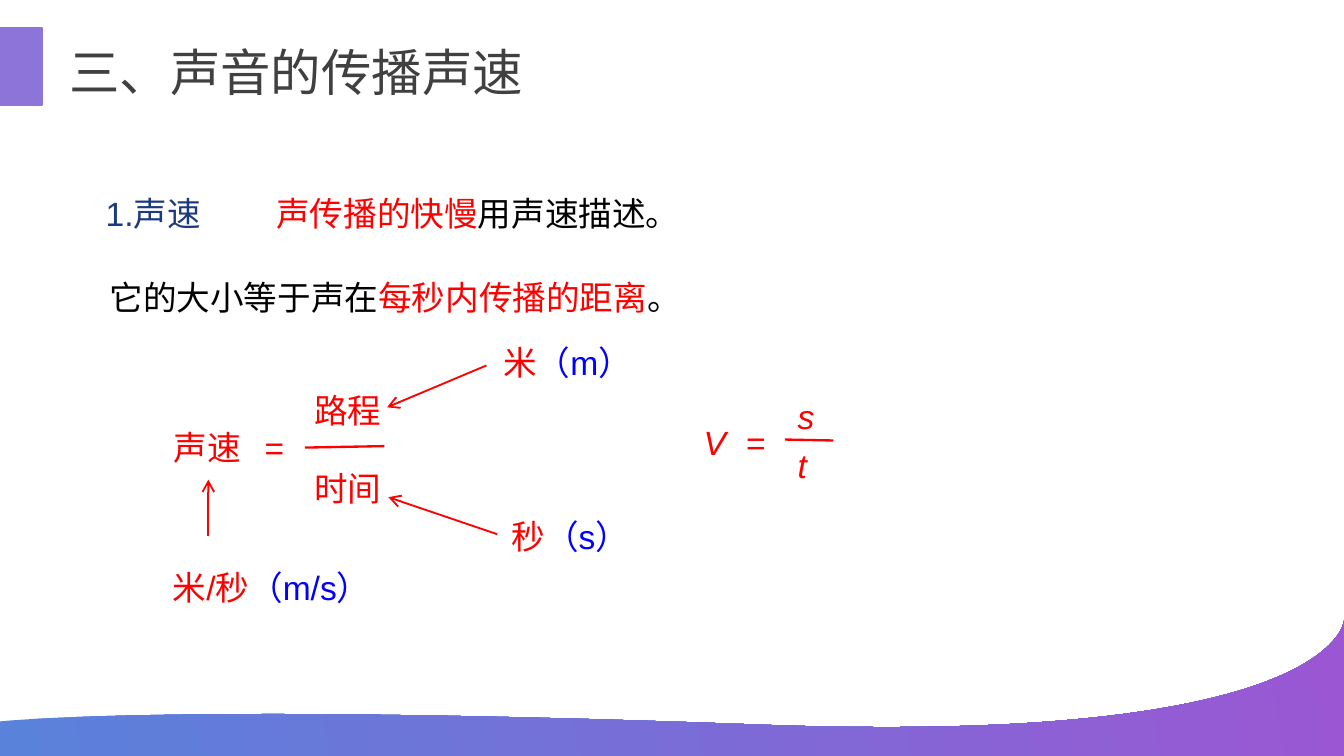
import dataclasses

import pptx
import pptx.dml.color
import pptx.enum.shapes
import pptx.enum.text
import pptx.oxml.ns
import pptx.util
from lxml import etree

Pt = pptx.util.Pt
ALIGN = pptx.enum.text.PP_ALIGN


@dataclasses.dataclass(frozen=True)
class Theme:
    font: str = "Arial"
    title_size: float = 27
    body_size: float = 18
    title: str = "404040"
    heading: str = "1B3B7F"
    body: str = "000000"
    key: str = "FF0000"
    unit: str = "0000FF"
    accent: str = "8C74D8"
    wave_start: str = "5982DB"
    wave_end: str = "9B57D3"


THEME = Theme()
LINE_HEIGHT = 27.4


def rgb(value):
    return pptx.dml.color.RGBColor.from_string(value)


def add_xml(parent, tag, **attributes):
    return etree.SubElement(parent, pptx.oxml.ns.qn(tag), attributes)


def write_text(box, spans, size=THEME.body_size, align=ALIGN.LEFT, italic=False,
               wrap=True, inset=(5.4, 2.7), tab=None):
    frame = box.text_frame
    frame.word_wrap = wrap
    frame.auto_size = pptx.enum.text.MSO_AUTO_SIZE.NONE
    frame.vertical_anchor = pptx.enum.text.MSO_ANCHOR.TOP
    frame.margin_left = frame.margin_right = Pt(inset[0])
    frame.margin_top = frame.margin_bottom = Pt(inset[1])
    para = frame.paragraphs[0]
    para.alignment = align
    if tab:
        stops = add_xml(para._p.get_or_add_pPr(), "a:tabLst")
        add_xml(stops, "a:tab", pos=str(int(Pt(tab))), algn="l")
    for text, color in spans:
        span = para.add_run()
        span.text = text
        span.font.name = THEME.font
        span.font.size = Pt(size)
        span.font.italic = italic
        span.font.color.rgb = rgb(color)


def add_text(page, left, top, width, spans, height=LINE_HEIGHT, **style):
    box = page.shapes.add_textbox(Pt(left), Pt(top), Pt(width), Pt(height))
    write_text(box, spans, **style)


def add_title(page, text):
    title = page.shapes.title
    title.left, title.top, title.width, title.height = Pt(31.7), Pt(19.4), Pt(255), Pt(38.2)
    write_text(title, [(text, THEME.title)], size=THEME.title_size, align=ALIGN.JUSTIFY)


def add_line(page, start, end, weight=1.25, arrow=False):
    line = page.shapes.add_connector(
        pptx.enum.shapes.MSO_CONNECTOR.STRAIGHT, *map(Pt, start + end))
    line.line.color.rgb = rgb(THEME.key)
    line.line.width = Pt(weight)
    if arrow:
        add_xml(line.line._get_or_add_ln(), "a:tailEnd", type="arrow")
    add_xml(line._element.spPr, "a:effectLst")


def curve_points(start, control_a, control_b, end, steps=60):
    points = []
    for step in range(steps + 1):
        t = step / steps
        weights = ((1 - t) ** 3, 3 * t * (1 - t) ** 2, 3 * t ** 2 * (1 - t), t ** 3)
        points.append(tuple(
            sum(weight * value for weight, value in zip(weights, values))
            for values in zip(start, control_a, control_b, end)))
    return points


def add_wave(page):
    middle, left_end, right_end = (403.2, 388.1), (-0.7, 386.6), (720, 332.6)
    outline = curve_points(middle, (90, 376.6), left_end, left_end)
    outline += [(0, 405), (720, 405)]
    outline += curve_points(right_end, right_end, (715.7, 400.3), middle)
    builder = page.shapes.build_freeform(*(Pt(value) for value in outline[0]), scale=1.0)
    builder.add_line_segments([(Pt(x), Pt(y)) for x, y in outline[1:]], close=True)
    wave = builder.convert_to_shape()
    wave.shadow.inherit = False
    wave.line.fill.background()
    wave.fill.gradient()
    wave.fill.gradient_angle = 10
    for stop, color in zip(wave.fill.gradient_stops, (THEME.wave_start, THEME.wave_end)):
        stop.color.rgb = rgb(color)


def add_title_marker(page):
    marker = page.shapes.add_shape(
        pptx.enum.shapes.MSO_SHAPE.RECTANGLE, 0, Pt(15.1), Pt(22.3), Pt(41))
    marker.shadow.inherit = False
    marker.fill.solid()
    marker.fill.fore_color.rgb = rgb(THEME.accent)
    marker.line.color.rgb = rgb(THEME.accent)
    marker.line.width = Pt(1)


def add_definition(page):
    add_text(page, 0, 100.8, 164.2, [("1.声速", THEME.heading)], align=ALIGN.CENTER)
    add_text(page, 142.6, 100.8, 229,
             [("声传播的快慢", THEME.key), ("用声速描述。", THEME.body)], wrap=False)
    add_text(page, 53.3, 145.4, 596.2,
             [("它的大小等于声在", THEME.body), ("每秒内传播的距离", THEME.key),
              ("。", THEME.body)])


def add_word_formula(page):
    add_text(page, 87.8, 226.1, 108.7, [("声速\t=", THEME.key)], tab=48.5)
    for text, top in (("路程", 205.2), ("时间", 247)):
        add_text(page, 161.3, top, 85, [(text, THEME.key)], height=29, inset=(7.2, 3.6))
    add_line(page, (163.4, 239.8), (205.9, 239))
    for name, unit, left, top, width in (
            ("米", "（m）", 264.2, 180.7, 113.8),
            ("秒", "（s）", 268.6, 273.6, 105.8),
            ("米/秒", "（m/s）", 87.1, 301, 186.5)):
        add_text(page, left, top, width, [(name, THEME.key), (unit, THEME.unit)])
    for start, end in (((111.6, 287.3), (111.6, 257)),
                       ((266.4, 286.2), (208.1, 266.4)),
                       ((260.6, 195.8), (207.4, 218.2))):
        add_line(page, start, end, weight=1, arrow=True)


def add_symbol_formula(page):
    add_text(page, 371.5, 223.2, 54.7, [("V\t=", THEME.key)], italic=True, tab=22.5)
    for symbol, top in (("s", 209.5), ("t", 235.4)):
        add_text(page, 421.9, top, 54.7, [(symbol, THEME.key)], italic=True)
    add_line(page, (420.5, 235.5), (446.4, 236))


def main():
    deck = pptx.Presentation()
    deck.slide_width, deck.slide_height = Pt(720), Pt(405)
    page = deck.slides.add_slide(deck.slide_layouts.get_by_name("Title Only"))
    add_wave(page)
    add_title_marker(page)
    add_title(page, "三、声音的传播声速")
    add_definition(page)
    add_word_formula(page)
    add_symbol_formula(page)
    deck.save("out.pptx")


if __name__ == "__main__":
    main()
